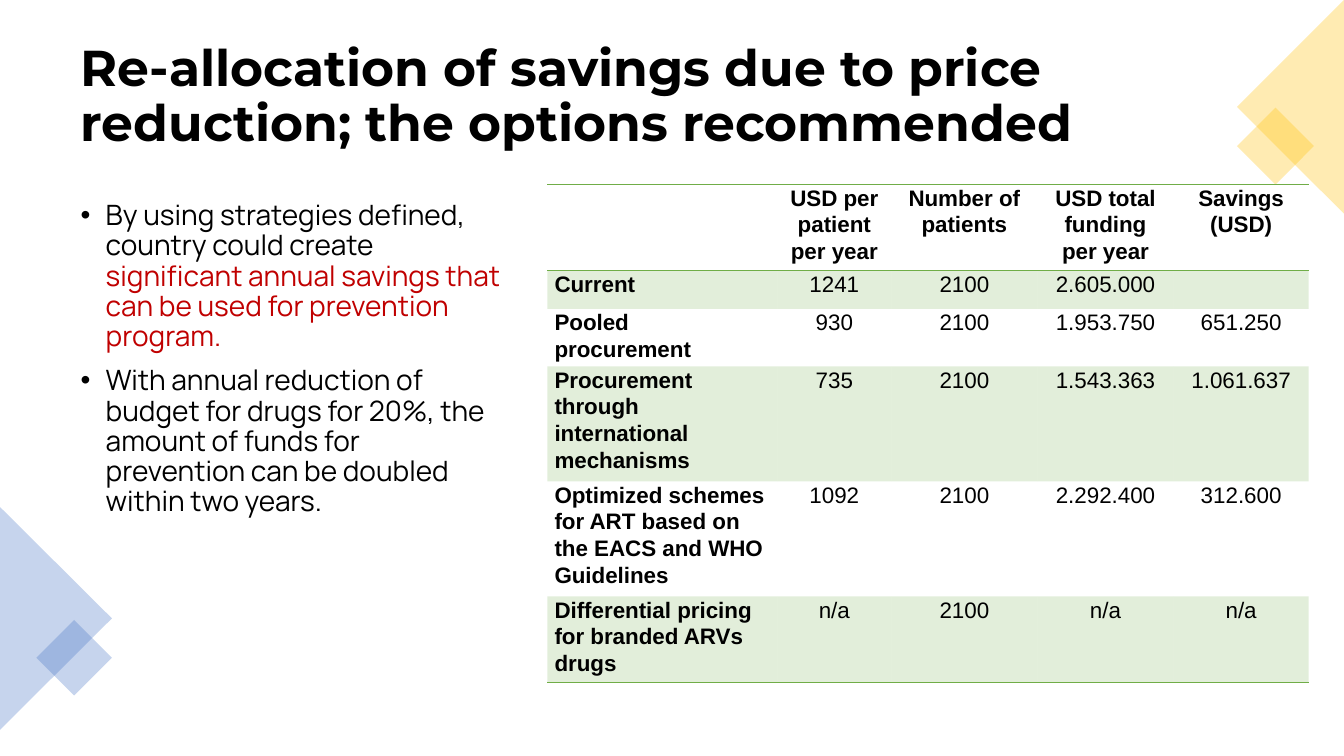
from lxml import etree
from pptx import Presentation
from pptx.dml.color import RGBColor
from pptx.enum.shapes import MSO_SHAPE
from pptx.enum.text import MSO_ANCHOR, PP_ALIGN
from pptx.oxml import parse_xml
from pptx.oxml.ns import nsdecls, qn
from pptx.util import Inches, Pt

TRIANGLE, SQUARE = MSO_SHAPE.ISOSCELES_TRIANGLE, MSO_SHAPE.RECTANGLE
LEFT, CENTER = PP_ALIGN.LEFT, PP_ALIGN.CENTER
TOP, MIDDLE = MSO_ANCHOR.TOP, MSO_ANCHOR.MIDDLE

BLACK, RED, GREEN, BLUE, YELLOW = "000000", "C00000", "70AD47", "4472C4", "FFC000"
NO_GRID_STYLE = "{2D5ABB26-0587-4C30-8999-92F81FD0307C}"

TITLE = "Re-allocation of savings due to price reduction; the options recommended"
BULLETS = [
    [("By using strategies defined, country could create ", BLACK),
     ("significant annual savings that can be used for prevention program.", RED)],
    [("With annual reduction of budget for drugs for 20%, the amount of funds for "
      "prevention can be doubled within two years.", BLACK)],
]
COLUMN_WIDTHS = [2.28, 1.13, 1.45, 1.35, 1.34]
ROW_HEIGHTS = [0.78, 0.38, 0.47, 0.96, 0.9, 0.68]
SAVINGS_ROWS = [
    ["", "USD per patient per year", "Number of patients",
     "USD total funding per year", "Savings (USD)"],
    ["Current", "1241", "2100", "2.605.000", ""],
    ["Pooled procurement", "930", "2100", "1.953.750", "651.250"],
    ["Procurement through international mechanisms", "735", "2100", "1.543.363", "1.061.637"],
    ["Optimized schemes for ART based on the EACS and WHO Guidelines",
     "1092", "2100", "2.292.400", "312.600"],
    ["Differential pricing for branded ARVs drugs", "n/a", "2100", "n/a", "n/a"],
]
# shape, left, top, width, height, rotation, colour
CORNER_SHAPES = [
    (TRIANGLE, -0.55, 5.58, 2.21, 1.11, 90, BLUE),
    (SQUARE, 0.47, 6.26, 0.53, 0.53, 45, BLUE),
    (SQUARE, 12.38, 1.18, 0.54, 0.54, 45, YELLOW),
    (TRIANGLE, 11.74, 0.53, 2.12, 1.06, 270, YELLOW),
]


def rgb(color):
    return RGBColor.from_string(color)


def format_font(font, name, size, color=BLACK, bold=False):
    font.name, font.size, font.bold = name, Pt(size), bold
    font.color.rgb = rgb(color)


def fill_transparent(fill, color, opacity):
    """Fill with a colour at the given opacity in percent."""
    fill.solid()
    fill.fore_color.rgb = rgb(color)
    color_element = fill._xPr.find(qn("a:solidFill"))[0]
    etree.SubElement(color_element, qn("a:alpha"), val=str(opacity * 1000))


def add_text_frame(slide, left, top, width, height, anchor):
    box = slide.shapes.add_textbox(Inches(left), Inches(top), Inches(width), Inches(height))
    text_frame = box.text_frame
    text_frame.word_wrap = True
    text_frame.vertical_anchor = anchor
    return text_frame


def add_title(slide):
    text_frame = add_text_frame(slide, 0.7, 0.35, 11.93, 1.24, MIDDLE)
    text_frame.text = TITLE
    paragraph = text_frame.paragraphs[0]
    paragraph.line_spacing = 0.9
    format_font(paragraph.runs[0].font, "Montserrat", 36, bold=True)


def set_bullet(paragraph):
    properties = paragraph._p.get_or_add_pPr()
    indent = Inches(0.25)
    properties.set("marL", str(indent))
    properties.set("indent", str(-indent))
    properties.append(parse_xml(
        f'<a:buClr {nsdecls("a")}><a:srgbClr val="{BLACK}"/></a:buClr>'))
    properties.append(parse_xml(f'<a:buFont {nsdecls("a")} typeface="Arial"/>'))
    properties.append(parse_xml(f'<a:buChar {nsdecls("a")} char="•"/>'))


def add_bullets(slide):
    text_frame = add_text_frame(slide, 0.7, 1.95, 4.38, 4.81, TOP)
    for index, parts in enumerate(BULLETS):
        paragraph = text_frame.add_paragraph() if index else text_frame.paragraphs[0]
        set_bullet(paragraph)
        paragraph.line_spacing = 0.9
        if index:
            paragraph.space_before = Pt(10)
        for text, color in parts:
            run = paragraph.add_run()
            run.text = text
            format_font(run.font, "Manrope", 20, color)


def add_corner_shape(slide, kind, left, top, width, height, rotation, color):
    shape = slide.shapes.add_shape(
        kind, Inches(left), Inches(top), Inches(width), Inches(height))
    shape.rotation = rotation
    shape.shadow.inherit = False
    shape.line.fill.background()
    fill_transparent(shape.fill, color, 30)


def set_borders(cell, sides):
    """Draw 1 pt green borders; sides is a string of T and B, in that order."""
    properties = cell._tc.get_or_add_tcPr()
    for index, side in enumerate(sides):
        properties.insert(index, parse_xml(
            f'<a:ln{side} {nsdecls("a")} w="{Pt(1)}"><a:solidFill>'
            f'<a:srgbClr val="{GREEN}"/></a:solidFill></a:ln{side}>'))


def format_cell(cell, text, bold, alignment):
    cell.margin_left = cell.margin_right = Inches(0.07)
    cell.margin_top = cell.margin_bottom = 0
    cell.text = text
    paragraph = cell.text_frame.paragraphs[0]
    paragraph.alignment = alignment
    paragraph.line_spacing = 1.07
    format_font(paragraph.font, "Arial", 16, bold=bold)
    for run in paragraph.runs:
        format_font(run.font, "Arial", 16, bold=bold)


def add_savings_table(slide):
    frame = slide.shapes.add_table(
        len(ROW_HEIGHTS), len(COLUMN_WIDTHS), Inches(5.43), Inches(1.83),
        Inches(sum(COLUMN_WIDTHS)), Inches(sum(ROW_HEIGHTS)))
    table = frame.table
    table.horz_banding = False
    table._tbl.tblPr.find(qn("a:tableStyleId")).text = NO_GRID_STYLE
    for column, width in zip(table.columns, COLUMN_WIDTHS):
        column.width = Inches(width)
    for row, height in zip(table.rows, ROW_HEIGHTS):
        row.height = Inches(height)
    borders = {0: "TB", len(SAVINGS_ROWS) - 1: "B"}
    for row_index, texts in enumerate(SAVINGS_ROWS):
        for column_index, text in enumerate(texts):
            cell = table.cell(row_index, column_index)
            bold = row_index == 0 or column_index == 0
            format_cell(cell, text, bold, CENTER if column_index else LEFT)
            if row_index % 2:
                fill_transparent(cell.fill, GREEN, 20)
            else:
                cell.fill.background()
            set_borders(cell, borders.get(row_index, ""))


def main():
    presentation = Presentation()
    presentation.slide_width, presentation.slide_height = Inches(13.33), Inches(7.5)
    slide = presentation.slides.add_slide(presentation.slide_layouts[6])
    add_title(slide)
    add_bullets(slide)
    for corner_shape in CORNER_SHAPES:
        add_corner_shape(slide, *corner_shape)
    add_savings_table(slide)
    presentation.save("out.pptx")


if __name__ == "__main__":
    main()
